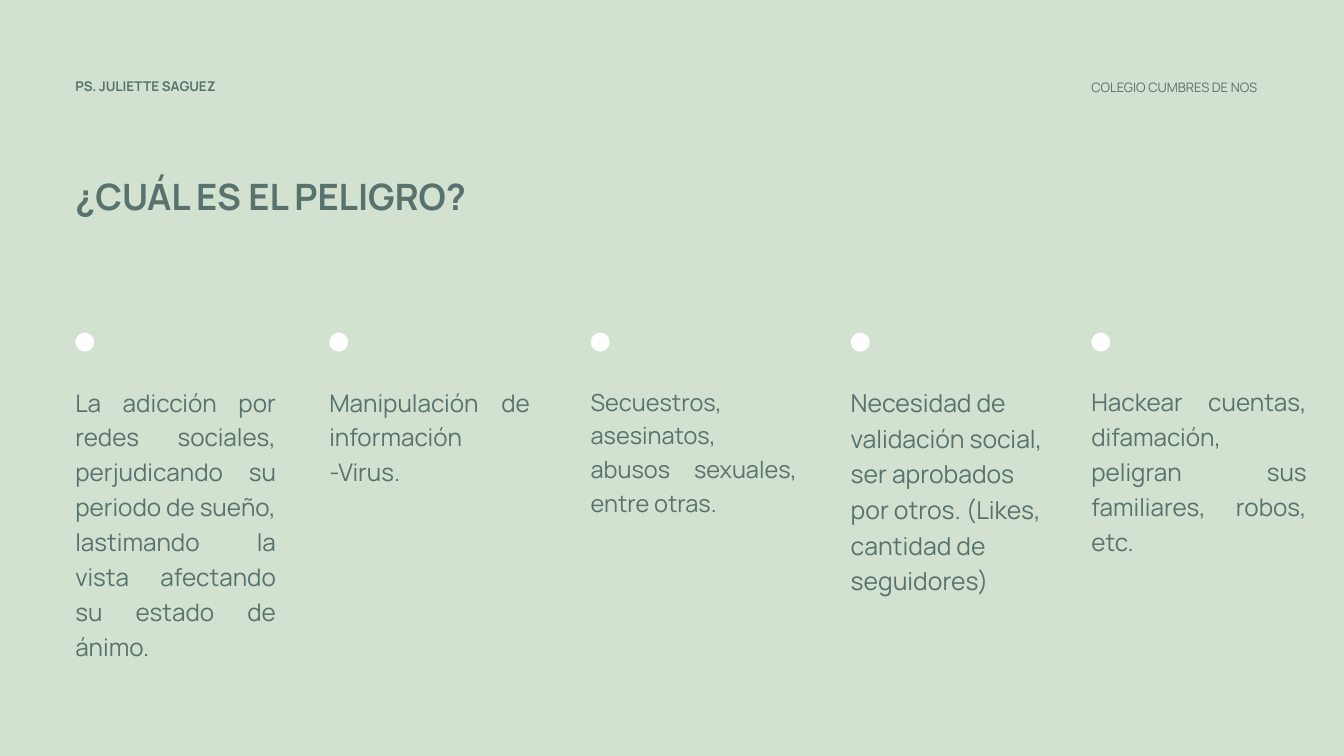
"""Build the slide on the dangers of social networks."""
from dataclasses import dataclass

from pptx import Presentation
from pptx.dml.color import RGBColor as Rgb
from pptx.enum.shapes import MSO_SHAPE as Kind
from pptx.enum.text import MSO_ANCHOR as Anchor, MSO_AUTO_SIZE as Fit, PP_ALIGN as Align
from pptx.util import Pt

AUTHOR = "PS. JULIETTE SAGUEZ"
SCHOOL = "COLEGIO CUMBRES DE NOS"
TITLE = "¿CUÁL ES EL PELIGRO?"
RISKS = [
    dict(left=80.64, wide=215.3, high=334, size=26, align=Align.JUSTIFY,
         text="La adicción por redes sociales, perjudicando su periodo de sueño, "
              "lastimando la vista afectando su estado de ánimo."),
    dict(left=352.8, wide=215.3, high=107, size=26, align=Align.JUSTIFY,
         text="Manipulación de información\n-Virus."),
    dict(left=632.9, wide=221, high=140, size=25.2, align=Align.JUSTIFY,
         text="Secuestros, asesinatos, abusos sexuales, entre otras."),
    dict(left=911.5, wide=208, high=263.5, size=26.5, align=Align.LEFT,
         text="Necesidad de validación social, ser aprobados por otros. "
              "(Likes, cantidad de seguidores)"),
    dict(left=1169.3, wide=231, high=183, size=26, align=Align.JUSTIFY,
         text="Hackear cuentas, difamación, peligran sus familiares, robos, etc."),
]


@dataclass(frozen=True)
class Theme:
    font: str = "Manrope"
    back: Rgb = Rgb(0xD3, 0xE2, 0xD0)
    ink: Rgb = Rgb(0x59, 0x72, 0x6D)
    dot: Rgb = Rgb(0xFF, 0xFF, 0xFF)
    title: float = 38.9
    author: float = 14.4
    school: float = 14


LOOK = Theme()
DOT_TOP, DOT_SIZE, BODY_TOP = 356.4, 20.4, 409.2


def place(shape, left, top, wide, high):
    shape.left, shape.top = Pt(left), Pt(top)
    shape.width, shape.height = Pt(wide), Pt(high)


def write(shape, text, *, size, bold=False, align=Align.LEFT, lead=1.2):
    frame = shape.text_frame
    frame.text = text
    frame.word_wrap = True
    frame.auto_size = Fit.NONE
    frame.vertical_anchor = Anchor.TOP
    frame.margin_left = frame.margin_right = 0
    frame.margin_top = frame.margin_bottom = 0
    for para in frame.paragraphs:
        para.alignment = align
        para.line_spacing = lead
        para.space_before = Pt(0)
        for run in para.runs:
            font = run.font
            font.name, font.size, font.bold = LOOK.font, Pt(size), bold
            font.color.rgb = LOOK.ink


def label(slide, text, left, top, wide, high, **style):
    box = slide.shapes.add_textbox(Pt(left), Pt(top), Pt(wide), Pt(high))
    write(box, text, **style)


def add_dot(slide, left):
    dot = slide.shapes.add_shape(Kind.OVAL, Pt(left), Pt(DOT_TOP), Pt(DOT_SIZE), Pt(DOT_SIZE))
    dot.shadow.inherit = False
    dot.fill.solid()
    dot.fill.fore_color.rgb = LOOK.dot
    dot.line.fill.background()


def main():
    deck = Presentation()
    deck.slide_width, deck.slide_height = Pt(1440), Pt(810)
    slide = deck.slides.add_slide(deck.slide_layouts[5])
    slide.background.fill.solid()
    slide.background.fill.fore_color.rgb = LOOK.back

    first, last = RISKS[0]["left"], RISKS[-1]["left"]
    title = slide.shapes.title
    place(title, first, 177.8, 681, 45.4)
    write(title, TITLE, size=LOOK.title, bold=True)
    label(slide, AUTHOR, first, 80.6, 231, 17.3, size=LOOK.author, bold=True)
    label(slide, SCHOOL, last, 78.5, 231, 18.7, size=LOOK.school, lead=1.4)

    for risk in RISKS:
        add_dot(slide, risk["left"])
        label(slide, risk["text"], risk["left"], BODY_TOP, risk["wide"], risk["high"],
              size=risk["size"], align=risk["align"])
    deck.save("out.pptx")


if __name__ == "__main__":
    main()
